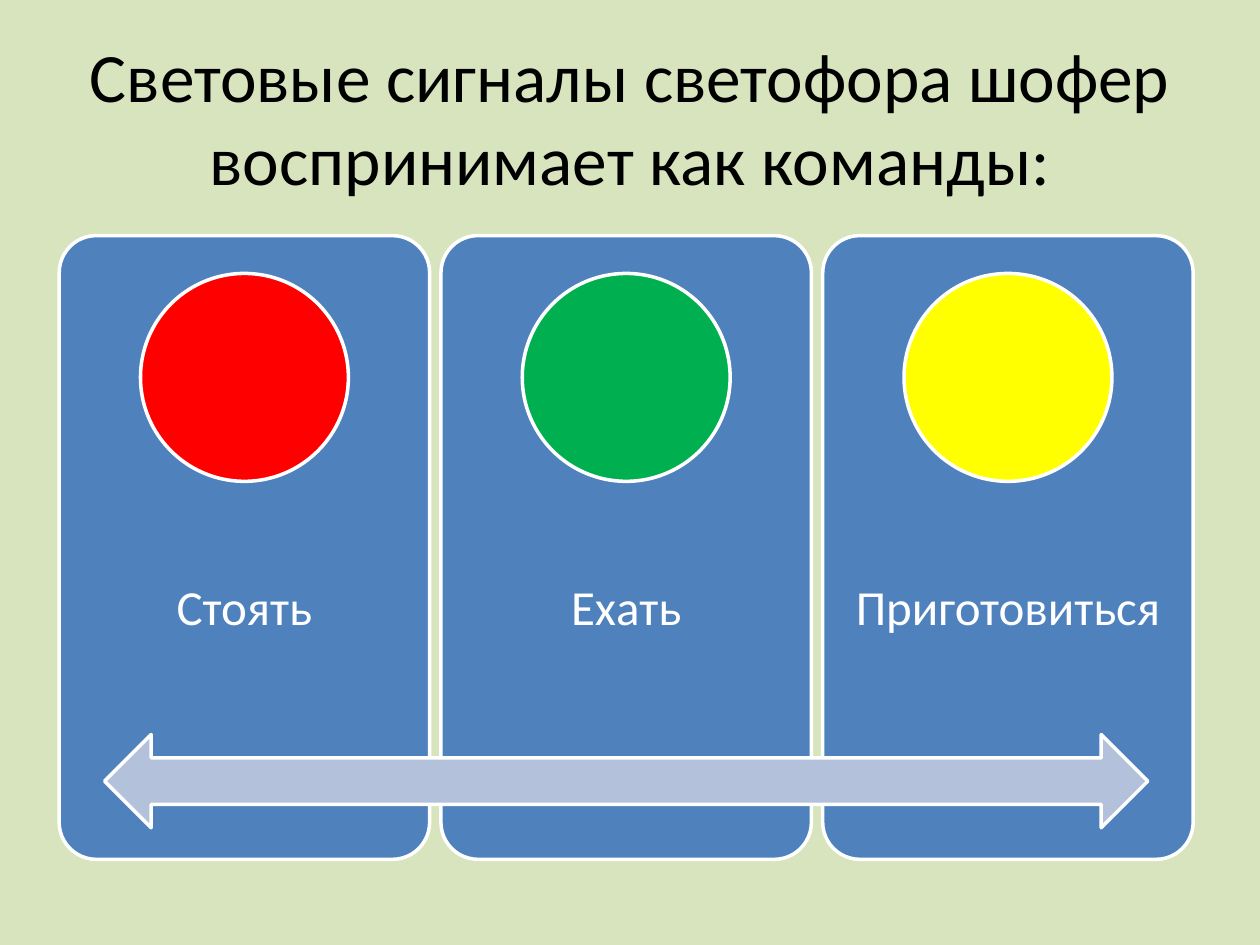
from dataclasses import dataclass

from pptx import Presentation
from pptx.dml.color import RGBColor
from pptx.enum.shapes import MSO_SHAPE
from pptx.enum.text import MSO_ANCHOR, PP_ALIGN
from pptx.shapes.autoshape import Shape
from pptx.slide import Slide
from pptx.util import Inches, Pt

ROUNDED = MSO_SHAPE.ROUNDED_RECTANGLE
OVAL = MSO_SHAPE.OVAL
DOUBLE_ARROW = MSO_SHAPE.LEFT_RIGHT_ARROW
MIDDLE = MSO_ANCHOR.MIDDLE
CENTER = PP_ALIGN.CENTER

BACKGROUND = RGBColor(0xD7, 0xE4, 0xBD)
PANEL_BLUE = RGBColor(0x4F, 0x81, 0xBD)
ARROW_BLUE = RGBColor(0xB3, 0xC1, 0xDB)
RED = RGBColor(0xFF, 0x00, 0x00)
GREEN = RGBColor(0x00, 0xB0, 0x50)
YELLOW = RGBColor(0xFF, 0xFF, 0x00)
WHITE = RGBColor(0xFF, 0xFF, 0xFF)
BLACK = RGBColor(0x00, 0x00, 0x00)

FONT = "Calibri"
PANEL_LEFT = 0.47
PANEL_WIDTH = 2.94
PANEL_STEP = 3.03
LAMP_SIZE = 1.65


@dataclass(frozen=True)
class Area:
    left: float
    top: float
    width: float
    height: float

    def lengths(self) -> tuple[Inches, Inches, Inches, Inches]:
        return (Inches(self.left), Inches(self.top),
                Inches(self.width), Inches(self.height))


@dataclass(frozen=True)
class Signal:
    command: str
    color: RGBColor


SIGNALS = [
    Signal("Стоять", RED),
    Signal("Ехать", GREEN),
    Signal("Приготовиться", YELLOW),
]


def draw_shape(page: Slide, kind: MSO_SHAPE, area: Area, color: RGBColor) -> Shape:
    shape = page.shapes.add_shape(kind, *area.lengths())
    shape.shadow.inherit = False
    shape.fill.solid()
    shape.fill.fore_color.rgb = color
    shape.line.color.rgb = WHITE
    shape.line.width = Pt(2)
    return shape


def draw_text(page: Slide, words: str, area: Area, size: float, color: RGBColor,
              inset_x: float, inset_y: float, spacing: float) -> None:
    box = page.shapes.add_textbox(*area.lengths())
    frame = box.text_frame
    frame.word_wrap = True
    frame.vertical_anchor = MIDDLE
    frame.margin_left = frame.margin_right = Inches(inset_x)
    frame.margin_top = frame.margin_bottom = Inches(inset_y)
    para = frame.paragraphs[0]
    para.alignment = CENTER
    para.line_spacing = spacing
    span = para.add_run()
    span.text = words
    span.font.name = FONT
    span.font.size = Pt(size)
    span.font.color.rgb = color


def draw_signal(page: Slide, signal: Signal, left: float) -> None:
    panel = draw_shape(page, ROUNDED, Area(left, 1.87, PANEL_WIDTH, 4.95), PANEL_BLUE)
    panel.adjustments[0] = 0.1
    draw_text(page, signal.command, Area(left, 3.85, PANEL_WIDTH, 1.98),
              28, WHITE, 0.22, 0.22, 0.9)
    lamp_left = left + (PANEL_WIDTH - LAMP_SIZE) / 2
    draw_shape(page, OVAL, Area(lamp_left, 2.17, LAMP_SIZE, LAMP_SIZE), signal.color)


def main() -> None:
    deck = Presentation()
    deck.slide_width = Inches(10)
    deck.slide_height = Inches(7.5)
    page = deck.slides.add_slide(deck.slide_layouts[6])
    page.background.fill.solid()
    page.background.fill.fore_color.rgb = BACKGROUND

    draw_text(page, "Световые сигналы светофора шофер воспринимает как команды:",
              Area(0.5, 0.3, 9, 1.25), 39.6, BLACK, 0.1, 0.05, 1.0)
    for index, signal in enumerate(SIGNALS):
        draw_signal(page, signal, PANEL_LEFT + index * PANEL_STEP)
    draw_shape(page, DOUBLE_ARROW, Area(0.83, 5.83, 8.28, 0.74), ARROW_BLUE)

    deck.save("out.pptx")


if __name__ == "__main__":
    main()
